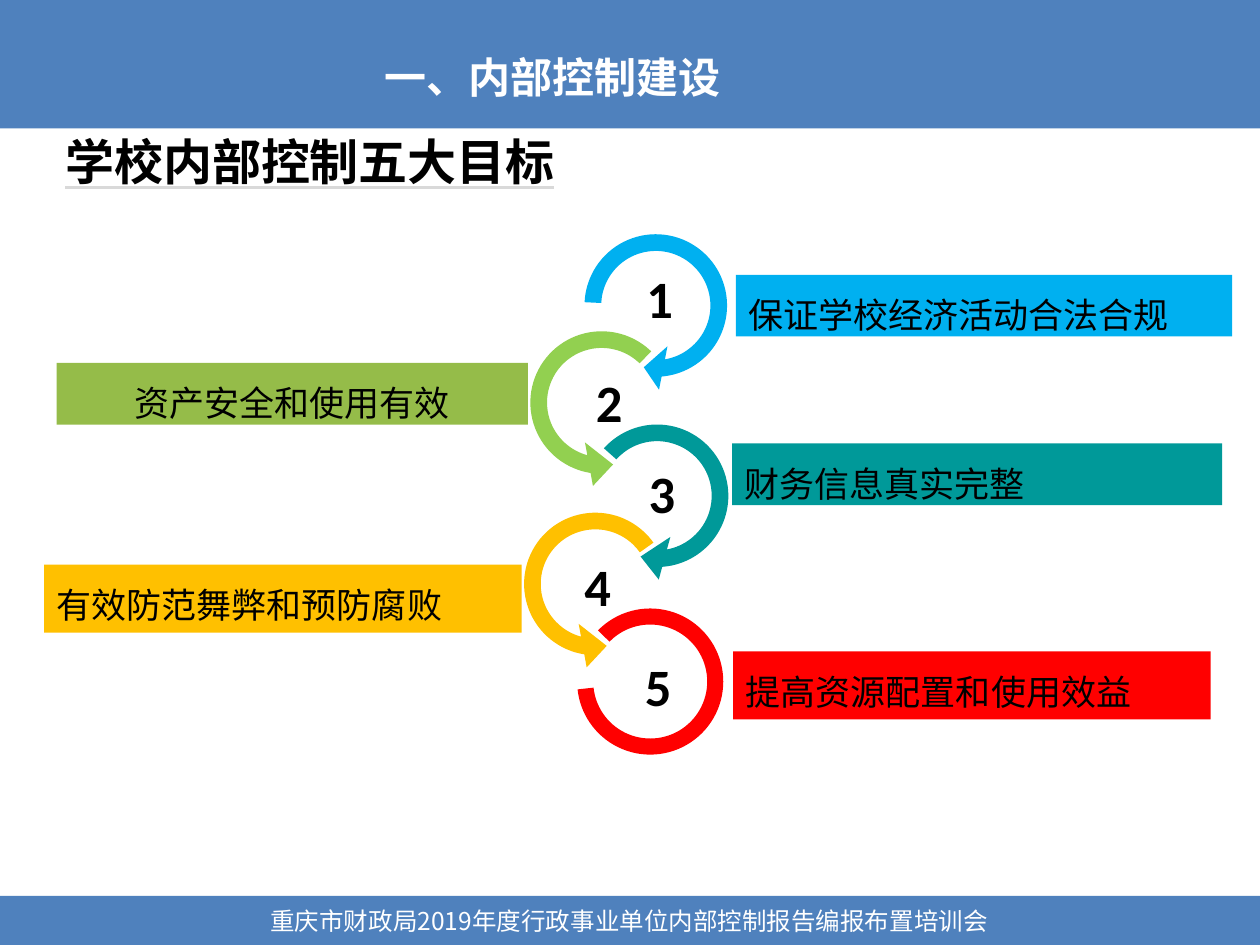
from dataclasses import dataclass

from lxml.etree import SubElement
from pptx import Presentation
from pptx.dml.color import RGBColor
from pptx.enum.shapes import MSO_SHAPE
from pptx.enum.text import MSO_ANCHOR, MSO_AUTO_SIZE, PP_ALIGN
from pptx.oxml import parse_xml
from pptx.oxml.ns import nsdecls, qn
from pptx.shapes.autoshape import Shape
from pptx.slide import Slide
from pptx.text.text import TextFrame
from pptx.util import Pt

COLORS = {
    "band": "4F81BD",
    "blue": "00B0F0",
    "arc_green": "92D050",
    "bar_green": "95BC49",
    "teal": "009999",
    "amber": "FFC000",
    "red": "FF0000",
    "black": "000000",
    "white": "FFFFFF",
    "underline": "D9D9D9",
}
CJK = "Noto Sans CJK SC"
SLIDE_WIDTH, SLIDE_HEIGHT = 720, 540

Box = tuple[float, float, float, float]


@dataclass
class Arc:
    left: float
    top: float
    color: str
    rotation: float
    adjustments: tuple[float, ...]
    flipped: bool = False
    size: float = 97.2
    kind: MSO_SHAPE = MSO_SHAPE.CIRCULAR_ARROW


@dataclass
class Goal:
    text: str
    bar: Box
    bar_color: str
    number_at: tuple[float, float]
    arc: Arc
    align: PP_ALIGN = PP_ALIGN.LEFT


GOALS = [
    Goal("保证学校经济活动合法合规", (420.5, 157, 283.7, 35.3), "blue", (362.2, 148.3),
         Arc(326.16, 126, "blue", 22.1, (0.098, 10.686, 36.658, 96.33, 0.13))),
    Goal("资产安全和使用有效", (32.4, 207.4, 269.3, 35.3), "bar_green", (333.4, 208.1),
         Arc(295.2, 181.44, "arc_green", 342.7,
             (0.098, 13.213, 36.658, 125.165, 0.13), True),
         PP_ALIGN.CENTER),
    Goal("财务信息真实完整", (418.3, 253.4, 280.1, 35.3), "teal", (363.6, 259.9),
         Arc(326.88, 234.72, "teal", 22.1, (0.098, 13.213, 36.658, 119.795, 0.13))),
    Goal("有效防范舞弊和预防腐败", (25.2, 322.6, 272.9, 38.9), "amber", (326.9, 313.2),
         Arc(291.6, 285.12, "amber", 342.7,
             (0.098, 13.213, 36.658, 118.868, 0.13), True),
         PP_ALIGN.JUSTIFY),
    Goal("提高资源配置和使用效益", (419, 372.2, 272.9, 38.9), "red", (361.4, 370.1),
         Arc(329.76, 347.76, "red", 56.3, (100.856, 70.522, 0.11),
             size=83.52, kind=MSO_SHAPE.BLOCK_ARC)),
]


def rgb(color: str) -> RGBColor:
    return RGBColor.from_string(COLORS[color])


def add_filled(slide: Slide, kind: MSO_SHAPE, box: Box, color: str) -> Shape:
    shape = slide.shapes.add_shape(kind, *map(Pt, box))
    shape.shadow.inherit = False
    shape.fill.solid()
    shape.fill.fore_color.rgb = rgb(color)
    shape.line.fill.background()
    return shape


def write(frame: TextFrame, text: str, size: float, color: str = "black",
          bold: bool = False, font: str = CJK, align: PP_ALIGN = PP_ALIGN.LEFT,
          wrap: bool = True, spacing: float = 1.0, underline: bool = False) -> None:
    frame.word_wrap = wrap
    frame.auto_size = MSO_AUTO_SIZE.SHAPE_TO_FIT_TEXT
    frame.vertical_anchor = MSO_ANCHOR.TOP
    paragraph = frame.paragraphs[0]
    paragraph.alignment = align
    paragraph.line_spacing = spacing
    run = paragraph.add_run()
    run.text = text
    run.font.size = Pt(size)
    run.font.bold = bold
    run.font.color.rgb = rgb(color)
    properties = run.font._element
    if underline:
        run.font.underline = True
        properties.append(parse_xml(
            f'<a:uFill {nsdecls("a")}><a:solidFill>'
            f'<a:srgbClr val="{COLORS["underline"]}"/></a:solidFill></a:uFill>'))
    run.font.name = font
    SubElement(properties, qn("a:ea")).set("typeface", font)


def add_text(slide: Slide, box: Box) -> TextFrame:
    return slide.shapes.add_textbox(*map(Pt, box)).text_frame


def add_arc(slide: Slide, arc: Arc) -> None:
    shape = add_filled(slide, arc.kind, (arc.left, arc.top, arc.size, arc.size), arc.color)
    shape.rotation = arc.rotation
    for index, value in enumerate(arc.adjustments):
        shape.adjustments[index] = value
    if arc.flipped:
        shape.element.spPr.find(qn("a:xfrm")).set("flipH", "1")


def add_goal(slide: Slide, number: int, goal: Goal) -> None:
    add_arc(slide, goal.arc)
    write(add_text(slide, (*goal.number_at, 30.2, 43.9)), str(number), 30,
          bold=True, font="Calibri", wrap=False)
    bar = add_filled(slide, MSO_SHAPE.RECTANGLE, goal.bar, goal.bar_color)
    write(bar.text_frame, goal.text, 20, align=goal.align, spacing=1.3)


def add_title(slide: Slide, text: str) -> None:
    title = slide.shapes.title
    title.left, title.top, title.width, title.height = map(Pt, (212.4, 25.9, 208.1, 36))
    write(title.text_frame, text, 24, "white", bold=True, wrap=False)
    slide.shapes.element.append(title.element)


def main() -> None:
    deck = Presentation()
    deck.slide_width, deck.slide_height = Pt(SLIDE_WIDTH), Pt(SLIDE_HEIGHT)
    slide = deck.slides.add_slide(deck.slide_layouts[5])

    for top, height in ((0, 73.4), (511.9, 28.1)):
        add_filled(slide, MSO_SHAPE.RECTANGLE, (0, top, SLIDE_WIDTH, height), "band")
    add_title(slide, "一、内部控制建设")

    heading = add_text(slide, (32.4, 72, 357.1, 39.6))
    heading.margin_left = heading.margin_right = Pt(5)
    heading.margin_top = heading.margin_bottom = Pt(2.9)
    write(heading, "学校内部控制五大目标", 28, bold=True, underline=True)

    for number, goal in enumerate(GOALS, 1):
        add_goal(slide, number, goal)

    write(add_text(slide, (126.7, 514.1, 465.8, 24.5)),
          "重庆市财政局2019年度行政事业单位内部控制报告编报布置培训会", 14, "white",
          align=PP_ALIGN.CENTER)
    deck.save("out.pptx")


if __name__ == "__main__":
    main()
